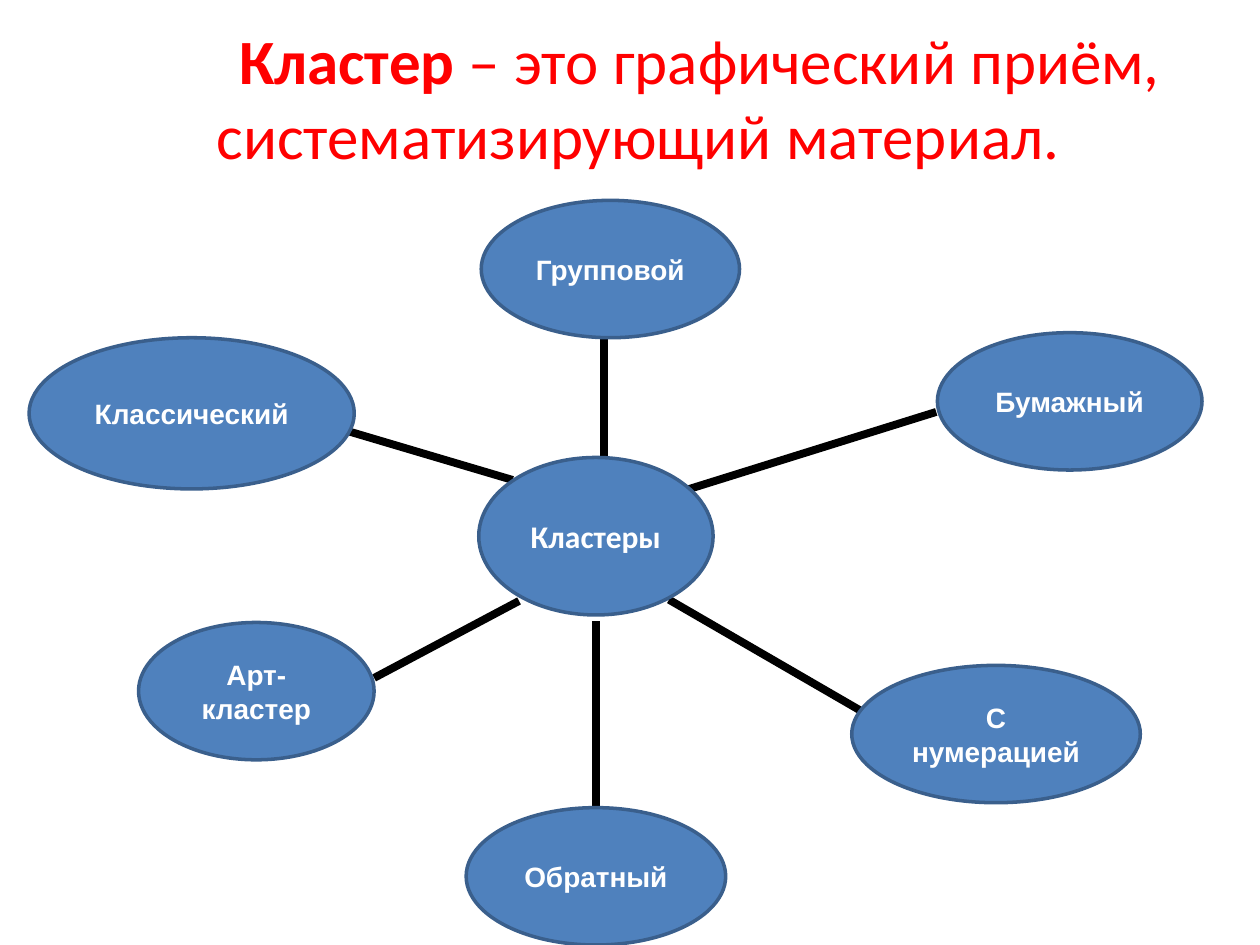
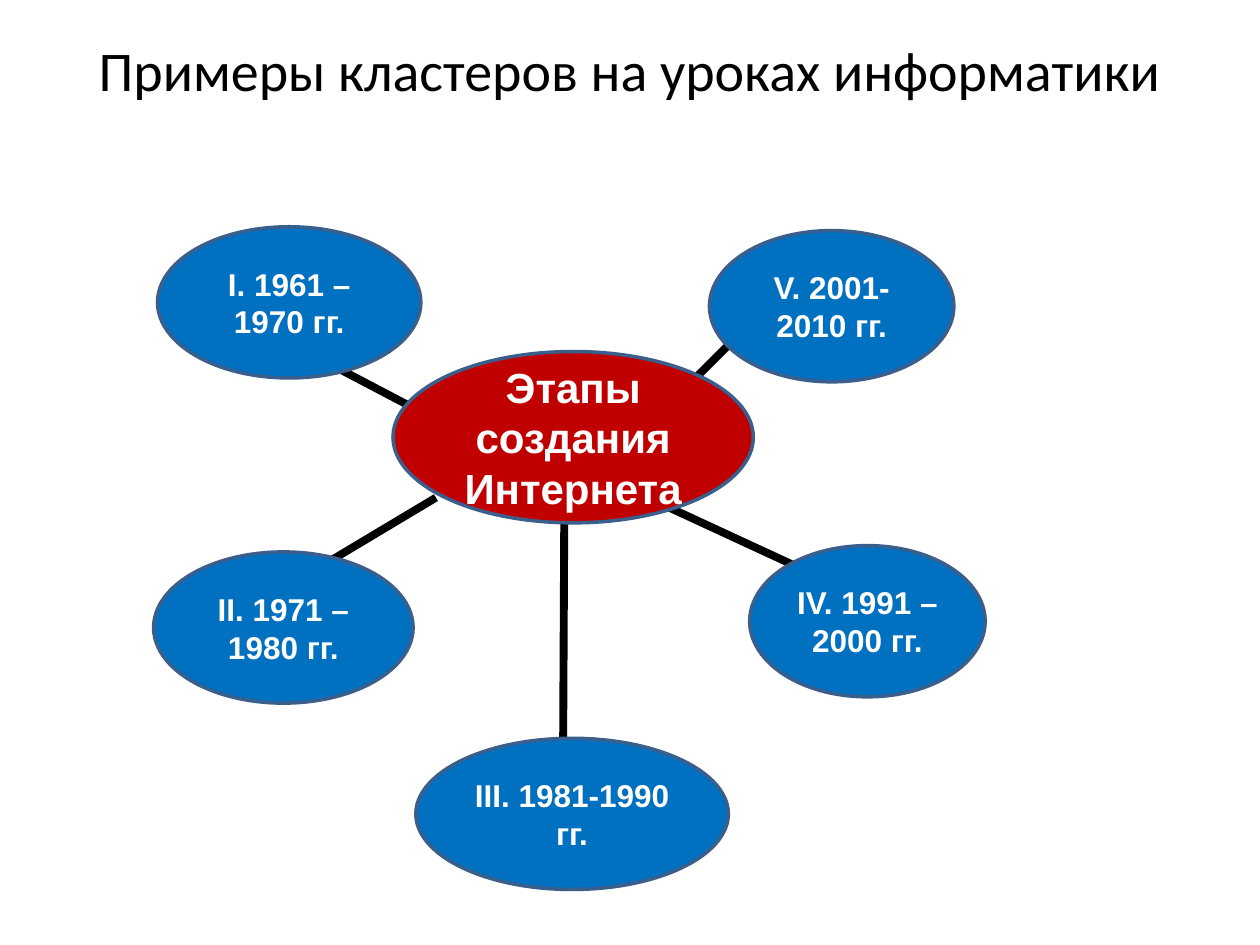
"""Build two slides of cluster diagrams."""
from dataclasses import dataclass

from lxml.etree import SubElement
from pptx import Presentation
from pptx.dml.color import RGBColor
from pptx.enum.shapes import MSO_CONNECTOR, MSO_SHAPE
from pptx.enum.text import MSO_ANCHOR, MSO_AUTO_SIZE, PP_ALIGN
from pptx.oxml.ns import qn
from pptx.util import Pt


@dataclass(frozen=True)
class Theme:
    black: str = "000000"
    white: str = "FFFFFF"
    red: str = "FF0000"
    steel: str = "4F81BD"
    blue: str = "0070C0"
    wine: str = "C00000"
    edge: str = "3A5F8C"
    head: str = "Calibri"
    text: str = "Arial"
    large: float = 36
    title: float = 32
    core: float = 24
    label: float = 18
    small: float = 16
    spoke: float = 4.5
    rim: float = 2


class Deck:
    def __init__(self, theme):
        self.theme = theme
        self.file = Presentation()
        self.file.slide_width, self.file.slide_height = Pt(720), Pt(540)

    def slide(self):
        self.page = self.file.slides.add_slide(self.file.slide_layouts[5])
        self.area = self.page.shapes

    def group(self):
        self.area = self.page.shapes.add_group_shape().shapes

    def run(self, para, text, size, color, font, bold):
        run = para.add_run()
        run.text = text
        run.font.size, run.font.name, run.font.bold = Pt(size), font, bold
        run.font.color.rgb = RGBColor.from_string(color)

    def title(self, box, runs, size, color, indent=0):
        shape = self.page.shapes.title
        shape.left, shape.top, shape.width, shape.height = map(Pt, box)
        frame = shape.text_frame
        frame.auto_size = MSO_AUTO_SIZE.NONE
        frame.vertical_anchor = MSO_ANCHOR.TOP
        para = frame.paragraphs[0]
        para.alignment = PP_ALIGN.CENTER
        if indent:
            para._p.get_or_add_pPr().set("indent", str(Pt(indent)))
        for text, bold in runs:
            self.run(para, text, size, color, self.theme.head, bold)

    def spoke(self, *ends):
        line = self.area.add_connector(MSO_CONNECTOR.STRAIGHT, *map(Pt, ends))
        line.line.width = Pt(self.theme.spoke)
        line.line.color.rgb = RGBColor.from_string(self.theme.black)
        SubElement(line._element.spPr, qn("a:effectLst"))

    def bubble(self, text, box, fill, size, font=None):
        shape = self.area.add_shape(MSO_SHAPE.OVAL, *map(Pt, box))
        shape.shadow.inherit = False
        shape.fill.solid()
        shape.fill.fore_color.rgb = RGBColor.from_string(fill)
        shape.line.width = Pt(self.theme.rim)
        shape.line.color.rgb = RGBColor.from_string(self.theme.edge)
        frame = shape.text_frame
        frame.word_wrap = True
        frame.vertical_anchor = MSO_ANCHOR.MIDDLE
        para = frame.paragraphs[0]
        para.alignment = PP_ALIGN.CENTER
        self.run(para, text, size, self.theme.white, font or self.theme.text, True)


def kinds(deck):
    theme = deck.theme
    deck.slide()
    deck.title((9.4, 8.6, 710.6, 105.1),
               [("Кластер", True),
                (" – это графический приём, систематизирующий материал.", False)],
               theme.large, theme.red, indent=70)
    deck.group()
    for ends in [(391.7, 280.1, 535, 235.4), (293, 274.3, 181.4, 241.2),
                 (296.6, 343.4, 213.8, 387.4), (382.3, 342.7, 491.8, 406.1),
                 (340.6, 355, 340.6, 465.1), (344.9, 270, 344.9, 185)]:
        deck.spoke(*ends)
    tall = 78.5
    for text, box in [("Бумажный", (535.7, 190.1, 151.2, tall)),
                      ("Классический", (16.6, 193, 185.8, 86.4)),
                      ("Арт- кластер", (79.2, 355.7, 134.6, tall)),
                      ("С нумерацией", (486.7, 380.2, 164.9, tall)),
                      ("Обратный", (266.4, 461.5, 148.3, tall)),
                      ("Групповой", (275, 114.5, 147.6, tall))]:
        deck.bubble(text, box, theme.steel, theme.small)
    deck.bubble("Кластеры", (273.6, 261.4, 133.9, 90), theme.steel,
                theme.label, theme.head)


def stages(deck):
    theme = deck.theme
    deck.slide()
    deck.title((36, 16.6, 648, 465.8),
               [("Примеры кластеров на уроках информатики", False)],
               theme.title, theme.black)
    for ends in [(321.8, 425.5, 322.6, 267.1), (424.8, 188.6, 352.1, 261.4),
                 (175.7, 328.3, 249.1, 284.4), (454.3, 323.3, 331.2, 266.4),
                 (244.8, 237.6, 185.8, 206.6)]:
        deck.spoke(*ends)
    deck.bubble("Этапы создания Интернета", (224.6, 200.9, 205.9, 97.9),
                theme.wine, theme.core)
    for text, left, top, width in [("III. 1981-1990 гг.", 237.6, 421.9, 178.6),
                                   ("IV. 1991 – 2000 гг.", 428.4, 311.8, 134.6),
                                   ("V. 2001- 2010 гг.", 405.4, 131.8, 139.7),
                                   ("II. 1971 – 1980 гг.", 87.8, 315.4, 148.3),
                                   ("I. 1961 – 1970 гг.", 90, 129.6, 150.5)]:
        deck.bubble(text, (left, top, width, 86.4), theme.blue, theme.label)


def main():
    deck = Deck(Theme())
    kinds(deck)
    stages(deck)
    deck.file.save("out.pptx")


if __name__ == "__main__":
    main()
